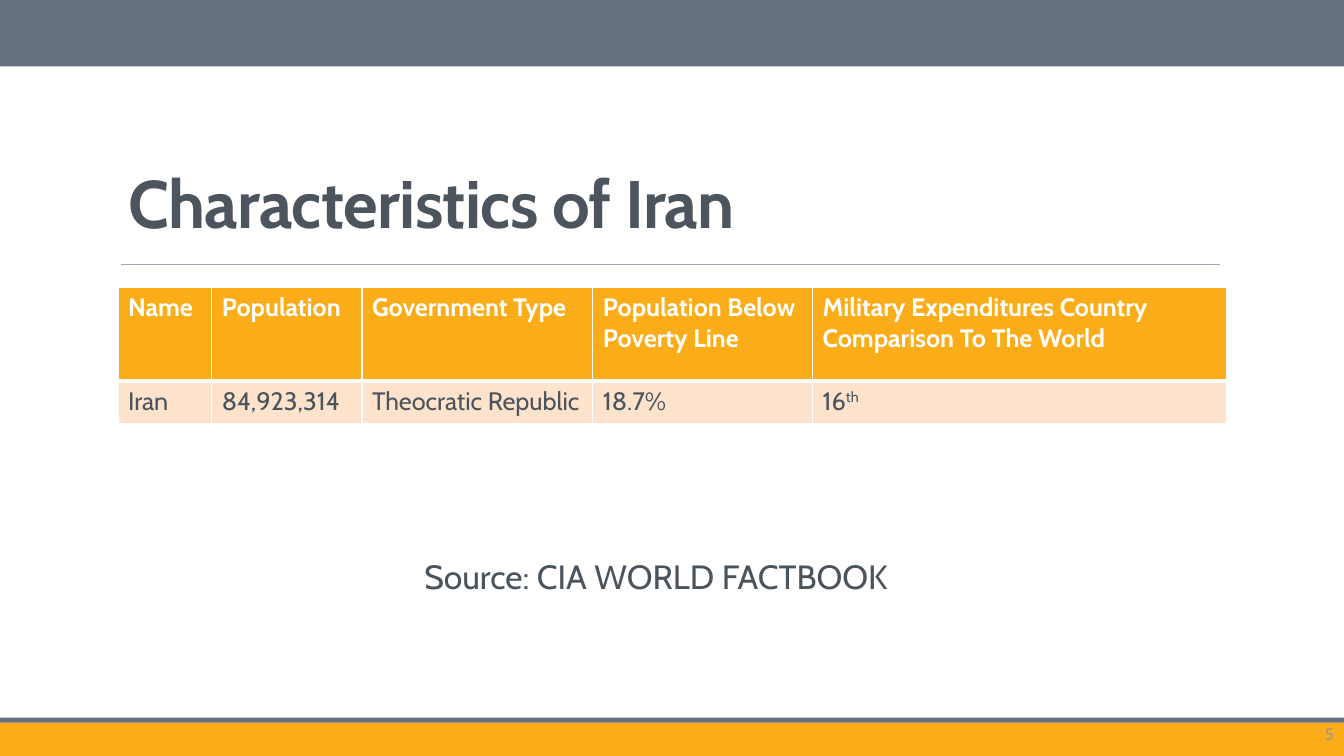
from lxml import etree
from pptx import Presentation
from pptx.dml.color import RGBColor
from pptx.enum.shapes import MSO_CONNECTOR, MSO_SHAPE
from pptx.enum.text import MSO_ANCHOR, MSO_AUTO_SIZE, PP_ALIGN
from pptx.oxml.ns import qn
from pptx.util import Inches, Pt

RECT = MSO_SHAPE.RECTANGLE
STRAIGHT = MSO_CONNECTOR.STRAIGHT
MIDDLE, BOTTOM = MSO_ANCHOR.MIDDLE, MSO_ANCHOR.BOTTOM
LEFT, RIGHT = PP_ALIGN.LEFT, PP_ALIGN.RIGHT
FIXED = MSO_AUTO_SIZE.NONE

FONT = "Cabin"
WIDTH, HEIGHT = 13.33, 7.5
ORANGE, SLATE, PEACH, WHITE = "FBAD19", "65707C", "FDE3CC", "FFFFFF"
TITLE_INK, INK, RULE, MUTED = "4C545D", "4B545D", "A0A9B3", "96999C"

COLUMN_WIDTHS = [0.93, 1.49, 2.29, 2.18, 4.11]
ROW_HEIGHTS = [0.93, 0.42]
ROWS = [
    ["Name", "Population", "Government Type", "Population Below Poverty Line",
     "Military Expenditures Country Comparison To The World"],
    ["Iran", "84,923,314", "Theocratic Republic", "18.7%", "16"],
]


def rgb(value):
    return RGBColor.from_string(value)


def style(p, size, color, bold=False, align=LEFT):
    p.alignment = align
    p.font.name = FONT
    p.font.size = Pt(size)
    p.font.bold = bold
    p.font.color.rgb = rgb(color)


def add_band(s, top, height, color):
    band = s.shapes.add_shape(RECT, 0, Inches(top), Inches(WIDTH), Inches(height))
    band.shadow.inherit = False
    band.fill.solid()
    band.fill.fore_color.rgb = rgb(color)
    band.line.fill.background()


def add_frame(s):
    """Draw the top and bottom bands and the rule under the title."""
    add_band(s, HEIGHT - 0.33, 0.33, ORANGE)
    add_band(s, HEIGHT - 0.38, 0.05, SLATE)
    add_band(s, 0, 0.66, SLATE)
    rule = s.shapes.add_connector(STRAIGHT, Inches(1.2), Inches(2.62),
                                  Inches(12.1), Inches(2.62))
    rule.line.color.rgb = rgb(RULE)
    rule.line.width = Pt(0.5)
    etree.SubElement(rule._element.spPr, qn("a:effectLst"))


def add_title(s, text, left, top, width, height):
    title = s.shapes.title
    title.left, title.top = Inches(left), Inches(top)
    title.width, title.height = Inches(width), Inches(height)
    tf = title.text_frame
    tf.text = text
    tf.auto_size = FIXED
    tf.word_wrap = True
    tf.vertical_anchor = BOTTOM
    p = tf.paragraphs[0]
    style(p, 48, TITLE_INK, bold=True)
    p.line_spacing = 0.85
    p.runs[0].font._element.set("spc", "-50")


def add_text(s, text, left, top, width, height, size, color, align=LEFT):
    box = s.shapes.add_textbox(Inches(left), Inches(top), Inches(width), Inches(height))
    tf = box.text_frame
    tf.text = text
    tf.word_wrap = True
    tf.vertical_anchor = MIDDLE
    style(tf.paragraphs[0], size, color, align=align)


def set_borders(cell, top, bottom):
    """Give the cell white borders, with top and bottom widths in points."""
    tcPr = cell._tc.get_or_add_tcPr()
    widths = {"lnL": 1, "lnR": 1, "lnT": top, "lnB": bottom}
    for i, (side, width) in enumerate(widths.items()):
        ln = etree.Element(qn(f"a:{side}"), w=str(Pt(width)))
        fill = etree.SubElement(ln, qn("a:solidFill"))
        etree.SubElement(fill, qn("a:srgbClr"), val=WHITE)
        tcPr.insert(i, ln)


def add_facts_table(s, left, top):
    frame = s.shapes.add_table(len(ROWS), len(COLUMN_WIDTHS), Inches(left), Inches(top),
                               Inches(sum(COLUMN_WIDTHS)), Inches(sum(ROW_HEIGHTS)))
    table = frame.table
    for column, width in zip(table.columns, COLUMN_WIDTHS):
        column.width = Inches(width)
    for r, (values, height) in enumerate(zip(ROWS, ROW_HEIGHTS)):
        table.rows[r].height = Inches(height)
        header = r == 0
        for c, value in enumerate(values):
            cell = table.cell(r, c)
            cell.text = value
            cell.fill.solid()
            cell.fill.fore_color.rgb = rgb(ORANGE if header else PEACH)
            style(cell.text_frame.paragraphs[0], 18, WHITE if header else INK, bold=header)
            set_borders(cell, top=1 if header else 3, bottom=3 if header else 1)
    ordinal = table.cell(1, 4).text_frame.paragraphs[0].add_run()
    ordinal.text = "th"
    ordinal.font._element.set("baseline", "30000")


def main():
    prs = Presentation()
    prs.slide_width, prs.slide_height = Inches(WIDTH), Inches(HEIGHT)
    s = prs.slides.add_slide(prs.slide_layouts[5])
    add_frame(s)
    add_title(s, "Characteristics of Iran", 1.17, 0.86, 11, 1.59)
    add_facts_table(s, 1.17, 2.85)
    add_text(s, "5", 11.9, 7.08, 1.43, 0.4, 12, MUTED, RIGHT)
    add_text(s, "Source: CIA WORLD FACTBOOK", 4.11, 5.47, 5.26, 0.5, 24, INK)
    prs.save("out.pptx")


if __name__ == "__main__":
    main()
